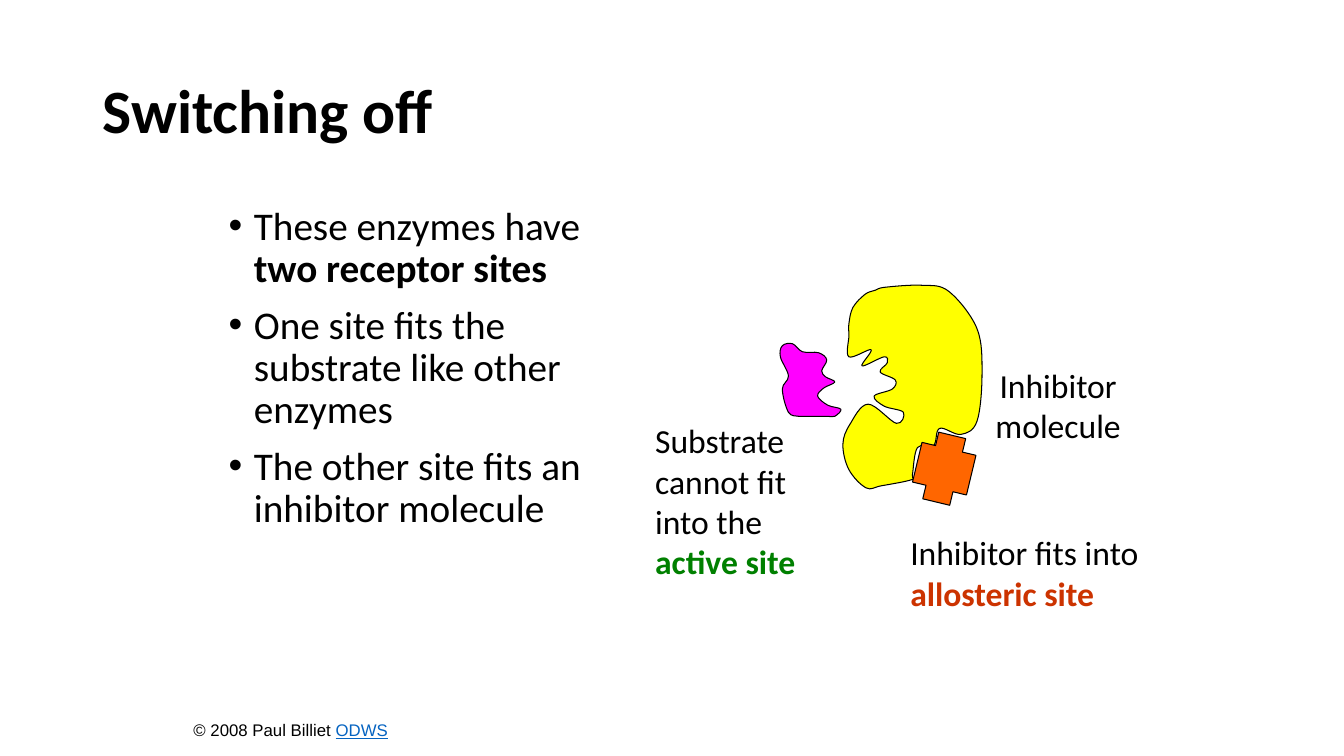
from lxml.etree import SubElement
from pptx import Presentation
from pptx.dml.color import RGBColor
from pptx.enum.shapes import MSO_SHAPE
from pptx.enum.text import MSO_ANCHOR, PP_ALIGN
from pptx.oxml.ns import qn
from pptx.util import Inches, Pt

COLUMNS, ROWS = 1333, 750
ENZYME = [
    (864, 347), (842, 354), (842, 333), (842, 321), (846, 305), (858, 292),
    (868, 288), (878, 285), (914, 283), (941, 289), (969, 326), (974, 371),
    (969, 418), (953, 431), (932, 425), (926, 442), (910, 444), (905, 471),
    (904, 476), (874, 482), (859, 484), (842, 466), (836, 441), (843, 421),
    (861, 401), (889, 420), (896, 409), (877, 403), (867, 393), (885, 386),
    (888, 377), (873, 369), (880, 360), (877, 354), (855, 363),
]
SUBSTRATE = [
    (796, 349), (812, 350), (820, 357), (815, 368), (819, 374), (828, 379),
    (817, 385), (811, 393), (821, 402), (834, 406), (828, 413), (821, 413),
    (810, 413), (799, 413), (792, 413), (782, 409), (776, 386), (782, 373),
    (774, 354), (776, 343), (786, 341),
]


def color(value):
    return RGBColor.from_string(value)


class Diagram:
    def __init__(self, presentation):
        self.width = presentation.slide_width
        self.height = presentation.slide_height
        self.slide = presentation.slides.add_slide(presentation.slide_layouts[6])
        self.shapes = self.slide.shapes
        self.font = {"name": "Calibri", "size": Pt(24), "bold": False}

    def place(self, column, row):
        return round(column * self.width / COLUMNS), round(row * self.height / ROWS)

    def box(self, column, row, columns, rows):
        return *self.place(column, row), *self.place(columns, rows)

    def text(self, box, paragraphs, anchor=MSO_ANCHOR.TOP, bullets=False,
             layout=None, **font):
        frame = self.shapes.add_textbox(*self.box(*box)).text_frame
        frame.word_wrap = True
        frame.vertical_anchor = anchor
        for index, runs in enumerate(paragraphs):
            paragraph = frame.paragraphs[0] if index == 0 else frame.add_paragraph()
            for name, value in (layout or {}).items():
                setattr(paragraph, name, value)
            if bullets:
                self.bullet(paragraph)
                paragraph.space_before = Pt(10 if index else 0)
            for content, changes in runs:
                self.run(paragraph, content, {**self.font, **font, **changes})

    def run(self, paragraph, content, style):
        run = paragraph.add_run()
        run.text = content
        style = dict(style)
        run.font.color.rgb = color(style.pop("color", "000000"))
        for name, value in style.items():
            setattr(run.font, name, value)

    def bullet(self, paragraph):
        properties = paragraph._p.get_or_add_pPr()
        properties.set("marL", str(Inches(0.25)))
        properties.set("indent", str(-Inches(0.25)))
        SubElement(properties, qn("a:buFont")).set("typeface", "Arial")
        SubElement(properties, qn("a:buChar")).set("char", "•")

    def paint(self, shape, fill):
        shape.shadow.inherit = False
        shape.fill.solid()
        shape.fill.fore_color.rgb = color(fill)
        shape.line.color.rgb = color("000000")
        shape.line.width = Pt(0.75)

    def cross(self, box, fill, rotation):
        shape = self.shapes.add_shape(MSO_SHAPE.CROSS, *self.box(*box))
        shape.adjustments[0] = 0.25
        shape.rotation = rotation
        self.paint(shape, fill)

    def molecule(self, anchors, fill):
        points = [self.place(*anchor) for anchor in anchors]
        builder = self.shapes.build_freeform(*points[0], scale=1.0)
        builder.add_line_segments(points[1:] + points[:1], close=True)
        shape = builder.convert_to_shape()
        self.round_outline(shape, points)
        self.paint(shape, fill)

    def round_outline(self, shape, points):
        count = len(points)
        local = [(x - shape.left, y - shape.top) for x, y in points]
        for index, line in enumerate(list(shape._element.iter(qn("a:lnTo")))):
            before, start, end, after = (local[(index + step) % count]
                                         for step in (-1, 0, 1, 2))
            first = [s + (e - b) / 6 for b, s, e in zip(before, start, end)]
            second = [e - (a - s) / 6 for s, e, a in zip(start, end, after)]
            curve = line.makeelement(qn("a:cubicBezTo"))
            for x, y in (first, second, end):
                point = SubElement(curve, qn("a:pt"))
                point.set("x", str(round(x)))
                point.set("y", str(round(y)))
            line.getparent().replace(line, curve)


def main():
    presentation = Presentation()
    presentation.slide_width = Inches(13.33)
    presentation.slide_height = Inches(7.5)
    diagram = Diagram(presentation)
    strong = {"bold": True}
    tight = {"line_spacing": 0.9}

    diagram.text((92, 40, 1150, 145), [[("Switching off", strong)]],
                 anchor=MSO_ANCHOR.MIDDLE, layout=tight, size=Pt(44))
    diagram.text((217, 200, 423, 479), [
        [("These enzymes have ", {}), ("two receptor sites", strong)],
        [("One site fits the substrate like other enzymes", {})],
        [("The other site fits an inhibitor molecule", {})],
    ], bullets=True, layout=tight, size=Pt(28))
    diagram.text((893, 523, 250, 113), [
        [("Inhibitor fits into ", {}),
         ("allosteric site", {**strong, "color": "CC3300"})],
    ])
    diagram.molecule(ENZYME, "FFFF00")
    diagram.cross((909, 431, 55, 68), "FF6600", 13.5)
    diagram.molecule(SUBSTRATE, "FF00FF")
    diagram.text((640, 412, 210, 153), [
        [("Substrate", {})],
        [("cannot fit into the ", {}),
         ("active site", {**strong, "color": "008000"})],
    ])
    diagram.text((963, 357, 173, 105), [[("Inhibitor molecule", {})]],
                 layout={"alignment": PP_ALIGN.CENTER})
    diagram.text((182, 709, 229, 30), [
        [("© 2008 Paul Billiet ", {}),
         ("ODWS", {"color": "0563C1", "underline": True})],
    ], name="Arial", size=Pt(12))
    presentation.save("out.pptx")


if __name__ == "__main__":
    main()
